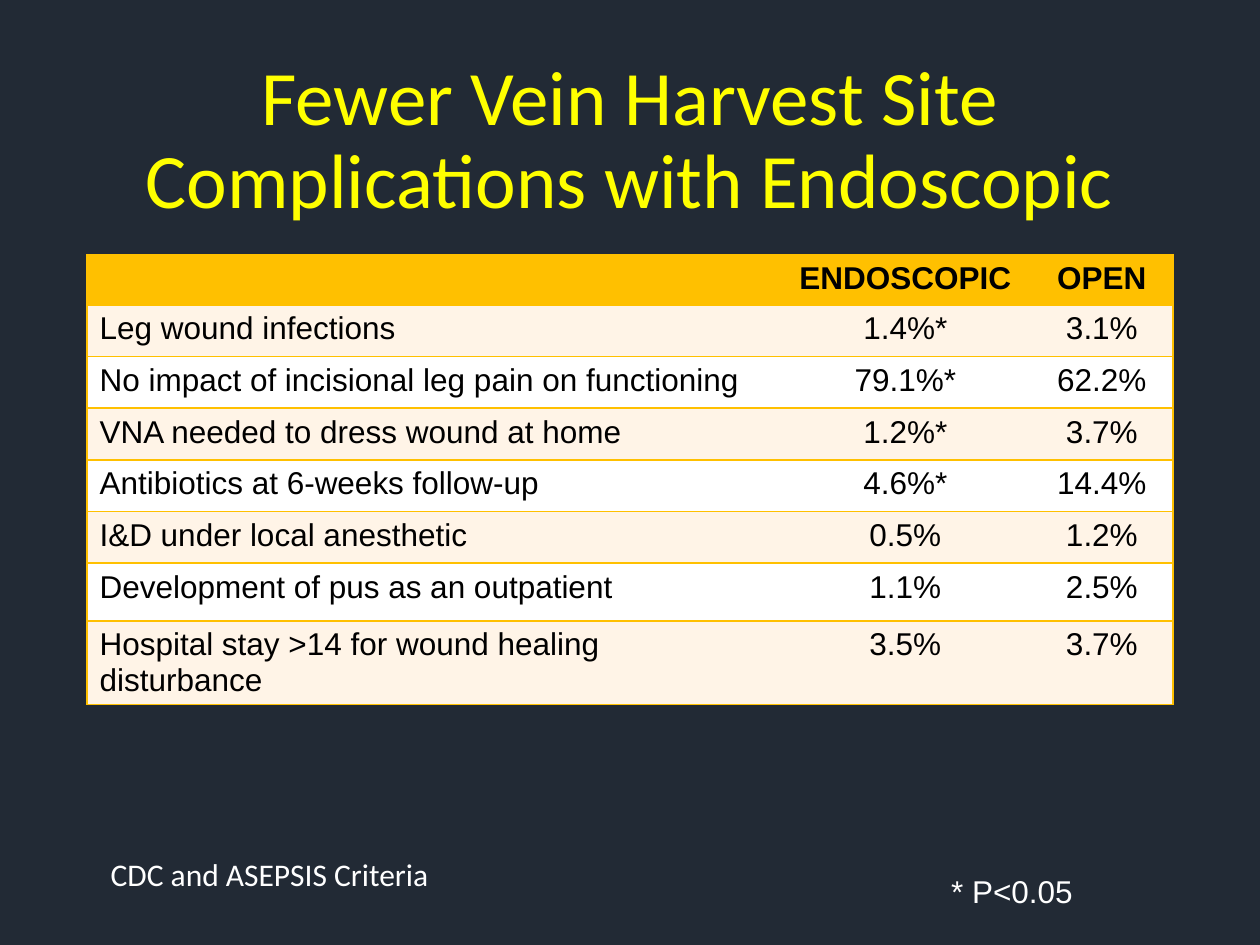
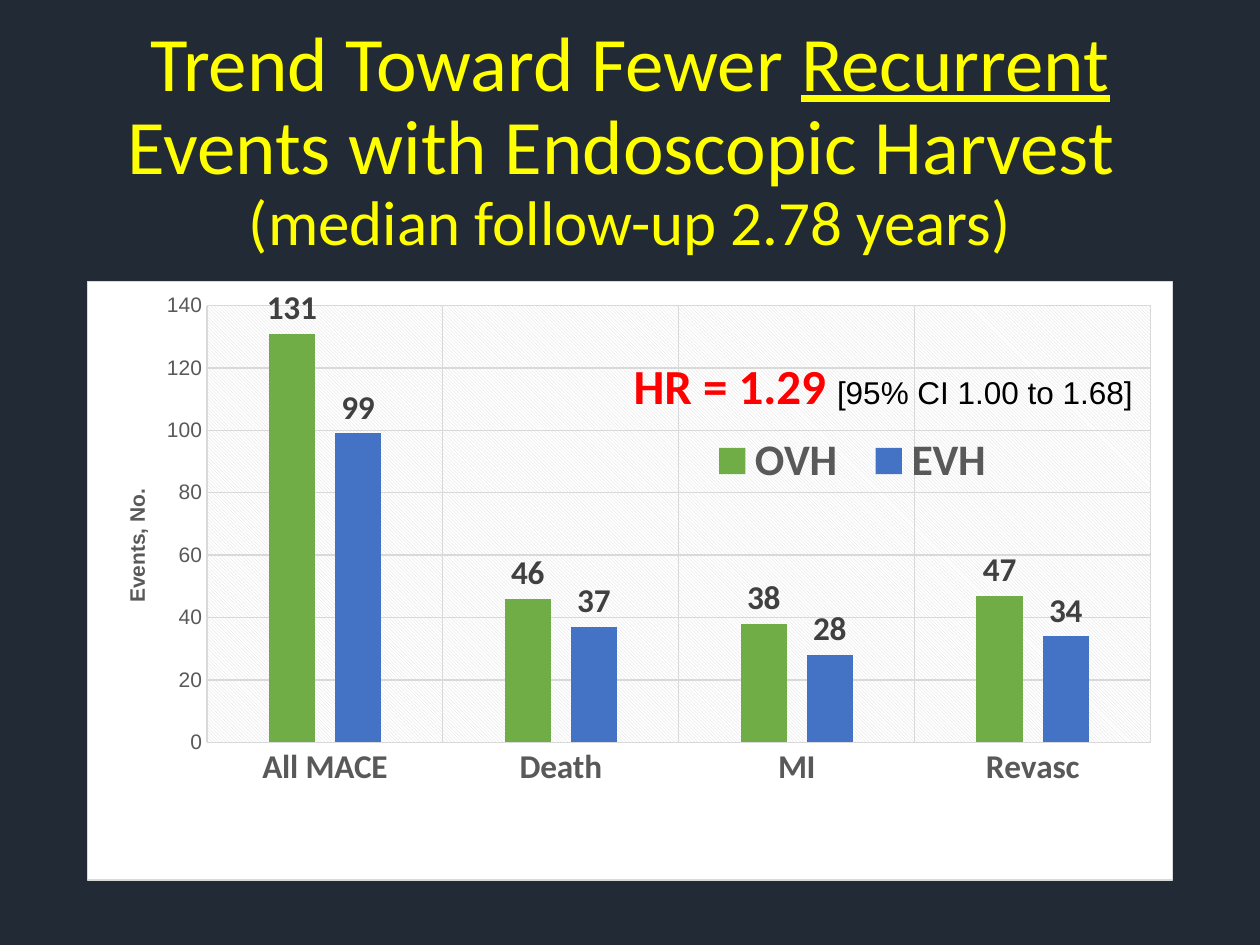
"""Build two slides comparing endoscopic and open vein harvest."""
from pptx import Presentation, util as u
from pptx.chart.data import CategoryChartData
from pptx.dml.color import RGBColor
from pptx.enum import chart as charts, text
from pptx.oxml import parse_xml

NAVY = RGBColor(0x22, 0x2A, 0x35)
YELLOW = RGBColor(0xFF, 0xFF, 0x00)
AMBER = RGBColor(0xFF, 0xC0, 0x00)
CREAM = RGBColor(0xFF, 0xF4, 0xE7)
WHITE = RGBColor(0xFF, 0xFF, 0xFF)
BLACK = RGBColor(0x00, 0x00, 0x00)
RED = RGBColor(0xFF, 0x00, 0x00)
GREEN = RGBColor(0x70, 0xAD, 0x47)
BLUE = RGBColor(0x44, 0x72, 0xC4)
LABEL_GREY = RGBColor(0x40, 0x40, 0x40)
TEXT_GREY = RGBColor(0x59, 0x59, 0x59)
RULE_GREY = RGBColor(0xD9, 0xD9, 0xD9)

NAMESPACES = (
    'xmlns:a="http://schemas.openxmlformats.org/drawingml/2006/main" '
    'xmlns:c="http://schemas.openxmlformats.org/drawingml/2006/chart"'
)
NO_TABLE_STYLE = "{2D5ABB26-0587-4C30-8999-92F81FD0307C}"


def set_font(font, name, size, color, bold=False):
    font.name = name
    font.size = u.Pt(size)
    font.color.rgb = color
    font.bold = bold


def place_chart_part(element, index, **shares):
    for layout in element.findall("{*}layout"):
        element.remove(layout)
    modes = "".join(f'<c:{side}Mode val="edge"/>' for side in "xy")
    values = "".join(f'<c:{key} val="{share}"/>' for key, share in shares.items())
    target = '<c:layoutTarget val="inner"/>' if index == 0 else ""
    element.insert(index, parse_xml(
        f"<c:layout {NAMESPACES}><c:manualLayout>{target}{modes}{values}"
        "</c:manualLayout></c:layout>"))


presentation = Presentation()
presentation.slide_width = u.Inches(10)
presentation.slide_height = u.Inches(7.5)
margin = int(presentation.slide_width * 0.069)
content_width = presentation.slide_width - 2 * margin

background = presentation.slide_master.background.fill
background.solid()
background.fore_color.rgb = NAVY

titles = [
    [("Fewer Vein Harvest Site Complications with Endoscopic", 44, False)],
    [("Trend Toward Fewer ", 44, False), ("Recurrent", 44, True),
     (" Events with Endoscopic Harvest ", 44, False),
     ("\v(median follow-up 2.78 years)", 36, False)],
]
slides = []
for title_runs in titles:
    slide = presentation.slides.add_slide(presentation.slide_layouts[5])
    title = slide.shapes.title
    title.left, title.top = margin, u.Inches(0.4)
    title.width, title.height = content_width, u.Inches(1.45)
    title.text_frame.auto_size = text.MSO_AUTO_SIZE.NONE
    title.text_frame.vertical_anchor = text.MSO_ANCHOR.MIDDLE
    paragraph = title.text_frame.paragraphs[0]
    paragraph.alignment = text.PP_ALIGN.CENTER
    paragraph.line_spacing = 0.9
    set_font(paragraph.font, "Calibri", 44, YELLOW)
    for words, size, underlined in title_runs:
        if words.startswith("\v"):
            paragraph.add_line_break()
        run = paragraph.add_run()
        run.text = words.lstrip("\v")
        set_font(run.font, "Calibri", size, YELLOW)
        run.font.underline = underlined
    slides.append(slide)
table_slide, chart_slide = slides

complications = [
    ("", "ENDOSCOPIC", "OPEN"),
    ("Leg wound infections", "1.4%*", "3.1%"),
    ("No impact of incisional leg pain on functioning", "79.1%*", "62.2%"),
    ("VNA needed to dress wound at home", "1.2%*", "3.7%"),
    ("Antibiotics at 6-weeks follow-up", "4.6%*", "14.4%"),
    ("I&D under local anesthetic", "0.5%", "1.2%"),
    ("Development of pus as an outpatient", "1.1%", "2.5%"),
    ("Hospital stay >14 for wound healing disturbance", "3.5%", "3.7%"),
]
row_heights = [0.4] + [0.41] * 5 + [0.46, 0.66]
column_widths = [5.5, 1.99, 1.13]
table = table_slide.shapes.add_table(
    len(row_heights), len(column_widths), margin, u.Inches(2.02),
    content_width, u.Inches(sum(row_heights))).table
table.first_row = table.horz_banding = False
table._tbl.tblPr[0].text = NO_TABLE_STYLE
for column, width in zip(table.columns, column_widths):
    column.width = u.Inches(width)
for row_index, (row, values) in enumerate(zip(table.rows, complications)):
    row.height = u.Inches(row_heights[row_index])
    is_header = row_index == 0
    for column_index, (cell, value) in enumerate(zip(row.cells, values)):
        cell.text = value
        paragraph = cell.text_frame.paragraphs[0]
        set_font(paragraph.font, "Arial", 18, BLACK, is_header)
        if column_index > 0:
            paragraph.alignment = text.PP_ALIGN.CENTER
        sides = {0: "LTB", 1: "TB", 2: "RTB"}[column_index]
        for side in sides:
            cell._tc.get_or_add_tcPr().append(parse_xml(
                f'<a:ln{side} {NAMESPACES} w="12700"><a:solidFill>'
                f'<a:srgbClr val="{AMBER}"/></a:solidFill></a:ln{side}>'))
        cell.fill.solid()
        cell.fill.fore_color.rgb = (
            AMBER if is_header else CREAM if row_index % 2 else WHITE)

series_colors = {"OVH": GREEN, "EVH": BLUE}
events = CategoryChartData()
events.categories = ["All MACE", "Death", "MI", "Revasc"]
events.add_series("OVH", (131, 46, 38, 47))
events.add_series("EVH", (99, 37, 28, 34))
chart = chart_slide.shapes.add_chart(
    charts.XL_CHART_TYPE.COLUMN_CLUSTERED, margin, u.Inches(2.23),
    content_width, u.Inches(4.76), events).chart
set_font(chart.font, "Arial", 10, BLACK)
chart.has_title = False

plot = chart.plots[0]
plot.gap_width = 267
plot.overlap = -43
plot.vary_by_categories = False
for series in plot.series:
    series.format.fill.solid()
    series.format.fill.fore_color.rgb = series_colors[series.name]
    labels = series.data_labels
    labels.show_value = True
    labels.position = charts.XL_LABEL_POSITION.OUTSIDE_END
    set_font(labels.font, "Calibri", 19, LABEL_GREY, True)

category_axis, value_axis = chart.category_axis, chart.value_axis
for axis in (category_axis, value_axis):
    axis.major_tick_mark = axis.minor_tick_mark = charts.XL_TICK_MARK.NONE
    axis.has_major_gridlines = True
    for line in (axis.major_gridlines.format.line, axis.format.line):
        line.color.rgb = RULE_GREY
        line.width = u.Pt(0.75)
value_axis.format.line.fill.background()
value_axis.minimum_scale, value_axis.maximum_scale = 0, 140
value_axis.major_unit = 20
set_font(category_axis.tick_labels.font, "Calibri", 19, TEXT_GREY, True)
set_font(value_axis.tick_labels.font, "Arial", 12, TEXT_GREY)

axis_title = value_axis.axis_title
axis_title.text_frame.text = "Events, No."
axis_title.text_frame._txBody.bodyPr.set("rot", "-5400000")
set_font(axis_title.text_frame.paragraphs[0].font, "Arial", 12, TEXT_GREY, True)

chart.has_legend = True
chart.legend.position = charts.XL_LEGEND_POSITION.BOTTOM
chart.legend.include_in_layout = False
set_font(chart.legend.font, "Calibri", 25, TEXT_GREY, True)

plot_area = chart._chartSpace.chart.plotArea
place_chart_part(plot_area, 0, x=0.11, y=0.04, w=0.87, h=0.73)
place_chart_part(chart.legend._element, 1, x=0.56, y=0.25, w=0.29, h=0.1)
place_chart_part(axis_title._element, 1, x=0.03, y=0.34)

plot_area.append(parse_xml(
    f'<c:spPr {NAMESPACES}><a:pattFill prst="ltDnDiag">'
    f'<a:fgClr><a:srgbClr val="{RULE_GREY}"/></a:fgClr>'
    f'<a:bgClr><a:srgbClr val="{WHITE}"/></a:bgClr></a:pattFill></c:spPr>'))
chart._chartSpace.chart.addnext(parse_xml(
    f'<c:spPr {NAMESPACES}><a:solidFill><a:srgbClr val="{WHITE}"/></a:solidFill>'
    f'<a:ln w="9525"><a:solidFill><a:srgbClr val="{RULE_GREY}"/></a:solidFill>'
    '</a:ln></c:spPr>'))

notes = [
    (table_slide, (7.45, 6.87, 1.18, 0.4),
     [("* P<0.05", "Arial", 18, WHITE, False)]),
    (table_slide, (0.78, 6.74, 2.75, 0.4),
     [("CDC and ASEPSIS Criteria", "Calibri", 18, WHITE, False)]),
    (chart_slide, (4.93, 2.77, 4.21, 0.57),
     [("HR = 1.29 ", "Calibri", 28, RED, True),
      ("[95% CI 1.00 to 1.68]", "Arial", 18, BLACK, False)]),
]
for slide, box, runs in notes:
    frame = slide.shapes.add_textbox(*map(u.Inches, box)).text_frame
    frame.word_wrap = False
    frame.auto_size = text.MSO_AUTO_SIZE.SHAPE_TO_FIT_TEXT
    paragraph = frame.paragraphs[0]
    for words, *style in runs:
        run = paragraph.add_run()
        run.text = words
        set_font(run.font, *style)

presentation.save("out.pptx")
